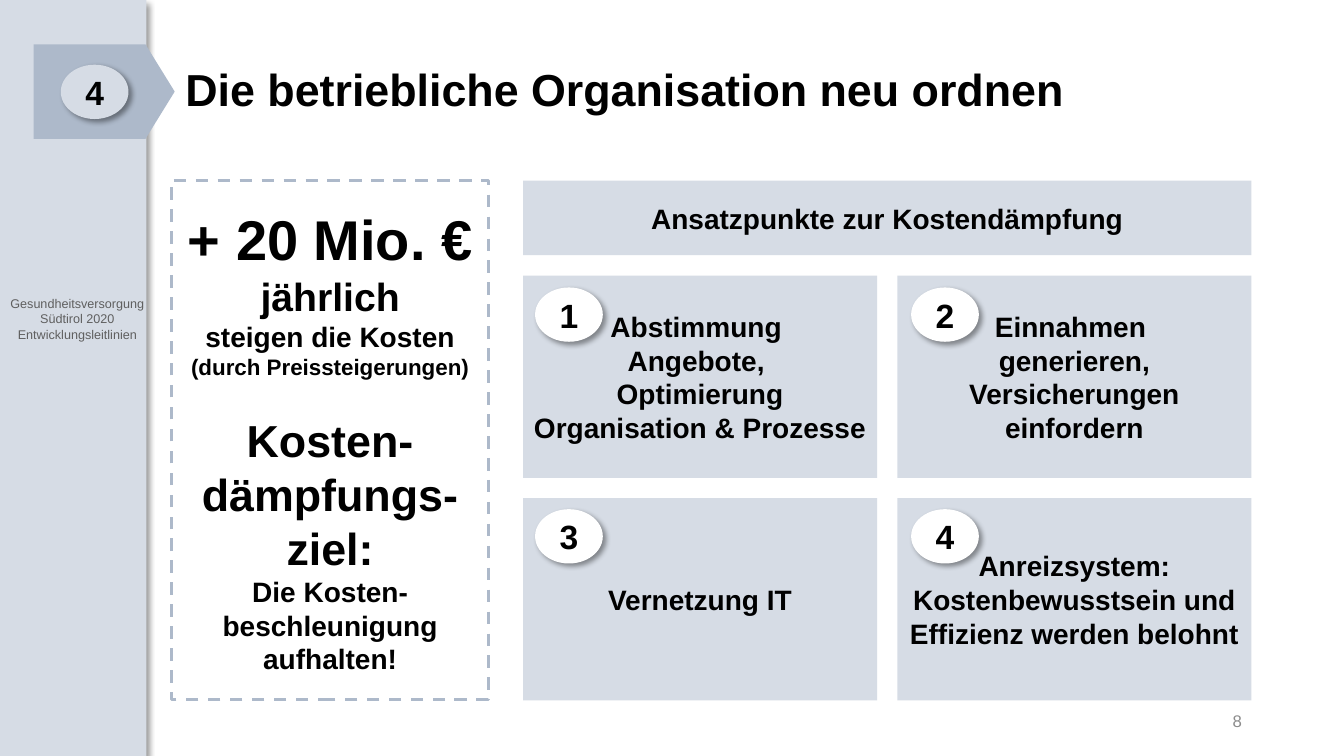
from lxml.etree import SubElement
from pptx import Presentation
from pptx.dml.color import RGBColor
from pptx.enum.dml import MSO_LINE
from pptx.enum.shapes import MSO_SHAPE
from pptx.enum.text import MSO_ANCHOR, PP_ALIGN
from pptx.oxml.ns import qn
from pptx.util import Pt

COLORS = {
    "pale": "D6DCE5",
    "blue": "ADB9CA",
    "white": "FFFFFF",
    "black": "000000",
    "label": "5F5F5F",
    "number": "8C8C8C",
}


def write(sp, lines, size=20, bold=True, color="black", align=PP_ALIGN.CENTER,
          anchor=MSO_ANCHOR.MIDDLE, spacing=None):
    """Fill a shape; a line is a text or a (text, size, space before) tuple."""
    tf = sp.text_frame
    tf.word_wrap = True
    tf.vertical_anchor = anchor
    for i, line in enumerate(lines):
        text, line_size, before = (line, size, 0) if isinstance(line, str) else line
        p = tf.paragraphs[0] if i == 0 else tf.add_paragraph()
        p.alignment = align
        if spacing:
            p.line_spacing = spacing
        if before:
            p.space_before = Pt(before)
        r = p.add_run()
        r.text = text
        r.font.name = "Arial"
        r.font.size = Pt(line_size)
        r.font.bold = bold
        r.font.color.rgb = RGBColor.from_string(COLORS[color])


def add_box(kind, x, y, w, h, fill=None, shadow=False):
    sp = s.shapes.add_shape(kind, Pt(x), Pt(y), Pt(w), Pt(h))
    sp.shadow.inherit = False
    sp.line.fill.background()
    if fill:
        sp.fill.solid()
        sp.fill.fore_color.rgb = RGBColor.from_string(COLORS[fill])
    else:
        sp.fill.background()
    if shadow:
        effects = sp._element.spPr.find(qn("a:effectLst"))
        outer = SubElement(effects, qn("a:outerShdw"), blurRad=str(Pt(4)),
                           dist=str(Pt(3)), dir="2700000", algn="tl", rotWithShape="0")
        tone = SubElement(outer, qn("a:srgbClr"), val=COLORS["black"])
        SubElement(tone, qn("a:alpha"), val="40000")
    return sp


prs = Presentation()
prs.slide_width, prs.slide_height = Pt(960), Pt(540)
s = prs.slides.add_slide(prs.slide_layouts[6])

# Sidebar, page number and title
add_box(MSO_SHAPE.RECTANGLE, 0, 0, 104.5, 540, "pale", shadow=True)
label = s.shapes.add_textbox(Pt(0), Pt(208), Pt(110.4), Pt(50.4))
write(label, ["Gesundheitsversorgung Südtirol 2020", "Entwicklungsleitlinien"],
      size=9, bold=False, color="label", anchor=MSO_ANCHOR.TOP)
number = s.shapes.add_textbox(Pt(678.2), Pt(500.4), Pt(216), Pt(28.8))
write(number, ["8"], size=12, bold=False, color="number", align=PP_ALIGN.RIGHT)
title = s.shapes.add_textbox(Pt(125.3), Pt(28.8), Pt(769), Pt(74.2))
write(title, ["Die betriebliche Organisation neu ordnen"], size=32,
      align=PP_ALIGN.LEFT, spacing=0.9)

# Chapter marker
BADGE_W, BADGE_H = 48.4, 38.8
arrow = add_box(MSO_SHAPE.PENTAGON, 24, 31.7, 100.8, 67.5, "blue")
arrow.adjustments[0] = 0.309
chapter = add_box(MSO_SHAPE.OVAL, 43.4, 46.2, BADGE_W, BADGE_H, "pale", shadow=True)
write(chapter, ["4"], size=24)

# Cost target
target = add_box(MSO_SHAPE.RECTANGLE, 122.4, 128.9, 226.8, 370.8)
target.line.color.rgb = RGBColor.from_string(COLORS["blue"])
target.line.width = Pt(2.25)
target.line.dash_style = MSO_LINE.DASH
write(target, [
    ("+ 20 Mio. € ", 40, 0),
    ("jährlich", 28, 0),
    "steigen die Kosten",
    ("(durch Preissteigerungen)", 16, 0),
    ("Kosten-dämpfungs-ziel:", 32, 24),
    "Die Kosten-beschleunigung aufhalten!",
])

# Starting points: header over a grid of two by two cards
LEFT, CARD_W, CARD_H = 373.6, 252.9, 144.5
STEP_X, STEP_Y = 267.4, 158.9
header = add_box(MSO_SHAPE.RECTANGLE, LEFT, 129.1, STEP_X + CARD_W, 53.2, "pale")
write(header, ["Ansatzpunkte zur Kostendämpfung"])

cards = [
    ["Abstimmung ", "Angebote, ", "Optimierung Organisation & Prozesse"],
    ["Einnahmen ", "generieren,", "Versicherungen", "einfordern"],
    ["Vernetzung IT"],
    ["Anreizsystem:", "Kostenbewusstsein und Effizienz werden belohnt"],
]
for i, lines in enumerate(cards):
    row, col = divmod(i, 2)
    card = add_box(MSO_SHAPE.RECTANGLE, LEFT + col * STEP_X, 196.9 + row * STEP_Y,
                   CARD_W, CARD_H, "pale")
    write(card, lines)
for i in range(len(cards)):
    row, col = divmod(i, 2)
    badge = add_box(MSO_SHAPE.OVAL, 382.2 + col * 268.6, 205.3 + row * 158.4,
                    BADGE_W, BADGE_H, "white", shadow=True)
    write(badge, [str(i + 1)], size=24)

prs.save("out.pptx")
